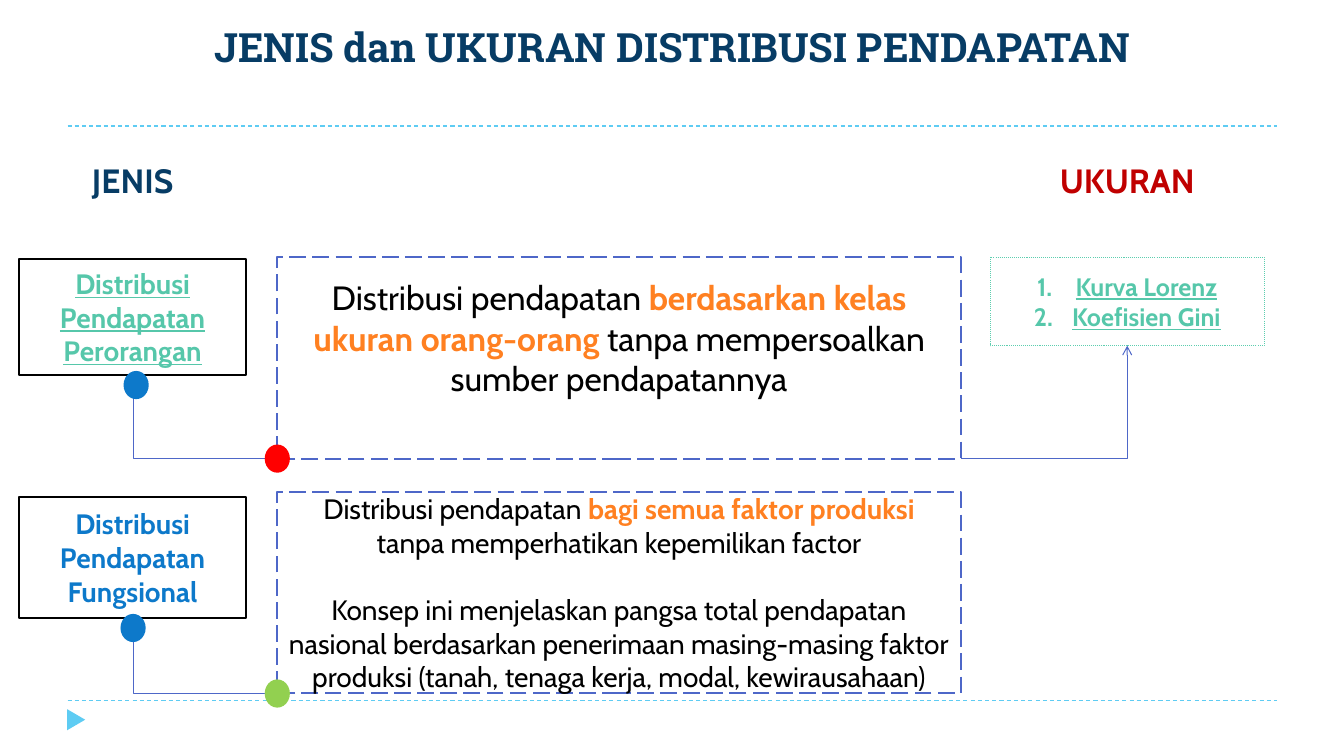
import pptx
import pptx.util
import pptx.dml.color
import pptx.enum.dml
import pptx.enum.shapes
import pptx.enum.text
import pptx.oxml
import pptx.oxml.ns
import lxml.etree

Inches = pptx.util.Inches
Pt = pptx.util.Pt
MSO_SHAPE = pptx.enum.shapes.MSO_SHAPE
MSO_CONNECTOR = pptx.enum.shapes.MSO_CONNECTOR
MSO_ANCHOR = pptx.enum.text.MSO_ANCHOR
DASH = pptx.enum.dml.MSO_LINE
qn = pptx.oxml.ns.qn

COLORS = {
    "sky": "5ECCF3", "navy": "073C65", "white": "FFFFFF", "black": "000000",
    "mint": "56C7AA", "mint_line": "5DCEAF", "blue": "0D79CA", "indigo": "4E67C8",
    "orange": "FF8021", "dark_red": "C00000", "red": "FF0000", "green": "92D050",
}


def rgb(name):
    """Return the named colour."""
    return pptx.dml.color.RGBColor.from_string(COLORS[name])


def style_line(line, color, width, dash=None):
    """Set colour, width and dash of a line."""
    line.color.rgb = rgb(color)
    line.width = Pt(width)
    if dash is not None:
        line.dash_style = dash


def format_run(r, size, color, bold=True, underline=False, font="Cabin"):
    """Set the character format of a run."""
    r.font.name, r.font.size = font, Pt(size)
    r.font.bold, r.font.underline = bold, underline or None
    r.font.color.rgb = rgb(color)


def add_shape(s, kind, box, fill, line=None):
    """Add a filled shape, outlined when line is given."""
    sp = s.shapes.add_shape(kind, *map(Inches, box))
    sp.shadow.inherit = False
    sp.fill.solid()
    sp.fill.fore_color.rgb = rgb(fill)
    if line:
        style_line(sp.line, *line)
    else:
        sp.line.fill.background()
    return sp


def add_panel(s, box, paragraphs, size, line=None, underline=False):
    """Add a white rectangle of centred paragraphs made of (text, colour, bold) runs."""
    sp = add_shape(s, MSO_SHAPE.RECTANGLE, box, "white", line)
    tf = sp.text_frame
    tf.word_wrap = True
    tf.vertical_anchor = MSO_ANCHOR.MIDDLE
    for i, runs in enumerate(paragraphs):
        p = tf.paragraphs[0] if i == 0 else tf.add_paragraph()
        p.alignment = pptx.enum.text.PP_ALIGN.CENTER
        for text, color, bold in runs:
            r = p.add_run()
            r.text = text
            format_run(r, size, color, bold, underline)
    return sp


def add_line(s, kind, start, end, color, dash=None):
    """Add a thin connector without shadow."""
    c = s.shapes.add_connector(kind, *map(Inches, start + end))
    style_line(c.line, color, 0.75, dash)
    lxml.etree.SubElement(c._element.spPr, qn("a:effectLst"))
    return c


def add_elbow(s, start, end):
    """Add a one-bend arrow: down then right, or right then up."""
    (x1, y1), (x2, y2) = start, end
    down = y2 > y1
    if down:
        cx, cy, half_w, half_h = (x1 + x2) / 2, (y1 + y2) / 2, (y2 - y1) / 2, (x2 - x1) / 2
        start, end = (cx + half_w, cy - half_h), (cx - half_w, cy + half_h)
    c = add_line(s, MSO_CONNECTOR.ELBOW, start, end, "indigo")
    spPr = c._element.spPr
    spPr.find(qn("a:prstGeom")).set("prst", "bentConnector2")
    if down:
        spPr.find(qn("a:xfrm")).set("rot", str(270 * 60000))
    lxml.etree.SubElement(spPr.find(qn("a:ln")), qn("a:tailEnd"), type="arrow")


def add_dot(s, center, color):
    """Add a joint dot around its centre."""
    w, h = 0.25, 0.28
    box = (center[0] - w / 2, center[1] - h / 2, w, h)
    add_shape(s, MSO_SHAPE.FLOWCHART_CONNECTOR, box, color)


def add_frame(s, box):
    """Add the dashed rules and the corner triangle."""
    x, y, w, h = box
    for rule_y in (y + h, y):
        add_line(s, MSO_CONNECTOR.STRAIGHT, (x, rule_y), (x + w, rule_y), "sky", DASH.DASH)
    triangle = (x - 0.02, y + h + 0.1, 0.21, 0.18)
    add_shape(s, MSO_SHAPE.ISOSCELES_TRIANGLE, triangle, "sky").rotation = 90


def add_title(s, box):
    """Place and format the slide title."""
    sp = s.shapes.title
    sp.left, sp.top, sp.width, sp.height = map(Inches, box)
    tf = sp.text_frame
    tf.text = "JENIS dan UKURAN DISTRIBUSI PENDAPATAN"
    tf.word_wrap = True
    tf.vertical_anchor = MSO_ANCHOR.TOP
    p = tf.paragraphs[0]
    p.alignment = pptx.enum.text.PP_ALIGN.CENTER
    format_run(p.runs[0], 28.8, "navy", font="Roboto Slab")


def add_kind(s, box, label, definition, size, underline, dot_x, dot_color):
    """Add a kind of distribution, its definition and the elbow joining them."""
    x, y, w, h = box
    label_top, label_h, label_text = label
    add_panel(s, (x, label_top, 2.25, label_h), label_text, 20, ("black", 1.5), underline)
    left = x + 2.56
    sp = add_panel(s, (left, y, w - 2.56, h), definition, size, ("indigo", 1.5, DASH.LONG_DASH))
    start, end = (x + 1.13, label_top + label_h), (left, y + h)
    add_elbow(s, start, end)
    add_dot(s, (dot_x, start[1] + 0.1), "blue")
    add_dot(s, end, dot_color)
    return sp


def add_measures(s, box):
    """Add the numbered list of measures."""
    items = [[(name, "mint", True)] for name in ("Kurva Lorenz", "Koefisien Gini")]
    sp = add_panel(s, box, items, 18, ("mint_line", 0.75, DASH.ROUND_DOT), True)
    for p in sp.text_frame.paragraphs:
        pPr = p._p.get_or_add_pPr()
        pPr.set("marL", str(Inches(0.38)))
        pPr.set("indent", str(-Inches(0.38)))
        bullet = lxml.etree.SubElement(pPr, qn("a:buFont"))
        bullet.set("typeface", "+mj-lt")
        lxml.etree.SubElement(pPr, qn("a:buAutoNum"), type="arabicPeriod")


def main():
    """Build and save the slide."""
    prs = pptx.Presentation()
    prs.slide_width, prs.slide_height = Inches(13.33), Inches(7.5)
    s = prs.slides.add_slide(prs.slide_layouts[5])
    add_frame(s, (0.67, 1.25, 12, 5.7))
    add_title(s, (0.67, 0.17, 12, 1.08))
    for x, w, text, color in ((0.19, 2.25, "JENIS", "navy"), (9.82, 2.72, "UKURAN", "dark_red")):
        add_panel(s, (x, 1.42, w, 0.73), [[(text, color, True)]], 24)

    functional = add_kind(
        s, (0.19, 4.88, 9.34, 2),
        (4.93, 1.2, [[("Distribusi", "blue", True)], [("Pendapatan Fungsional", "blue", True)]]),
        [[("Distribusi pendapatan ", "black", False),
          ("bagi semua faktor produksi ", "orange", True),
          ("tanpa memperhatikan kepemilikan factor", "black", False)],
         [("Konsep ini menjelaskan pangsa total pendapatan nasional berdasarkan penerimaan "
           "masing-masing faktor produksi (tanah, tenaga kerja, modal, kewirausahaan)",
           "black", False)]],
        20, False, 1.32, "green")
    functional.text_frame.paragraphs[1].space_before = Pt(24)

    personal = add_kind(
        s, (0.19, 2.55, 9.34, 2),
        (2.57, 1.15, [[("Distribusi Pendapatan Perorangan", "mint", True)]]),
        [[("Distribusi pendapatan ", "black", False),
          ("berdasarkan kelas ukuran orang-orang ", "orange", True),
          ("tanpa mempersoalkan sumber pendapatannya", "black", False)]],
        24, True, 1.35, "red")
    personal.text_frame.margin_bottom = Inches(0.45)

    add_measures(s, (9.82, 2.55, 2.72, 0.88))
    add_elbow(s, (9.53, 4.55), (11.18, 3.43))
    prs.save("out.pptx")


if __name__ == "__main__":
    main()
